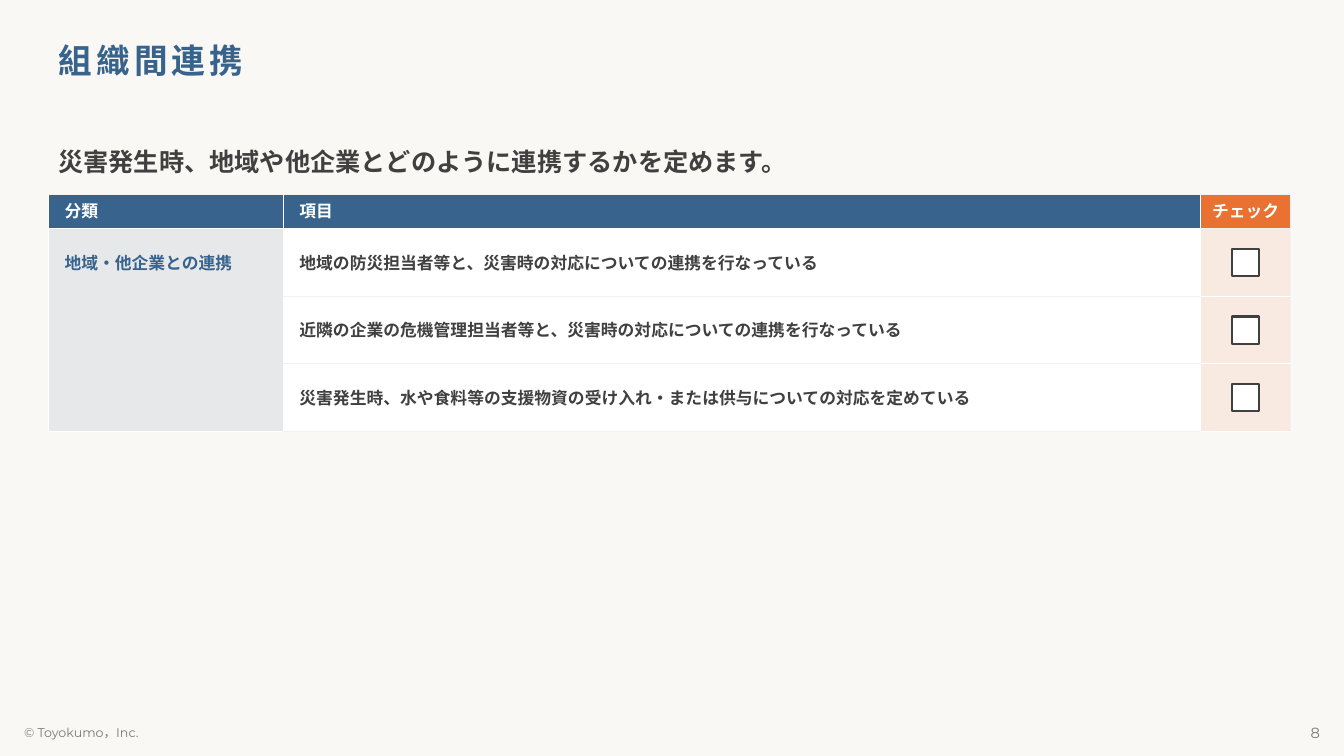
from dataclasses import dataclass

from lxml.etree import SubElement
from pptx import Presentation
from pptx.dml.color import RGBColor
from pptx.enum.shapes import MSO_SHAPE
from pptx.enum.text import MSO_ANCHOR, PP_ALIGN
from pptx.oxml import parse_xml
from pptx.oxml.ns import nsdecls, qn
from pptx.slide import Slide
from pptx.table import Table, _Cell
from pptx.text.text import TextFrame
from pptx.util import Inches, Pt

FONT = "Montserrat"
COLORS = {
    "background": "FAF8F4",
    "blue": "37638D",
    "orange": "E97132",
    "dark": "404040",
    "muted": "797979",
    "rule": "F2F2F2",
    "white": "FFFFFF",
}
TABLE_LEFT, TABLE_TOP = 0.48, 1.93
COLUMN_WIDTHS = (2.33, 9.1, 0.89)
HEADER_HEIGHT, ROW_HEIGHT = 0.34, 0.67
CHECKBOX_SIZE = 0.27


@dataclass(frozen=True)
class TextStyle:
    size: float
    color: str
    bold: bool = False
    align: PP_ALIGN = PP_ALIGN.LEFT


@dataclass(frozen=True)
class CellSpec:
    """grey_sides names the borders (L, R, T, B) that are grey, not white."""
    row: int
    col: int
    text: str
    color: str
    fill: str
    grey_sides: str = ""
    tinted: bool = False
    margins: tuple[float, float, float, float] = (0.16, 0.01, 0.01, 0)
    anchor: MSO_ANCHOR = MSO_ANCHOR.MIDDLE
    align: PP_ALIGN = PP_ALIGN.LEFT


@dataclass(frozen=True)
class Label:
    left: float
    top: float
    width: float
    height: float
    text: str
    style: TextStyle


HEADER_MARGINS = (0.16, 0.05, 0.1, 0.05)
ITEMS = (
    "地域の防災担当者等と、災害時の対応についての連携を行なっている",
    "近隣の企業の危機管理担当者等と、災害時の対応についての連携を行なっている",
    "災害発生時、水や食料等の支援物資の受け入れ・または供与についての対応を定めている",
)
HEADERS = (
    CellSpec(0, 0, "分類", "white", "blue", "T", margins=HEADER_MARGINS),
    CellSpec(0, 1, "項目", "white", "blue", "T", margins=HEADER_MARGINS),
    CellSpec(0, 2, "チェック", "white", "orange", "TRB",
             margins=(0.1, 0.05, 0.1, 0.05), align=PP_ALIGN.CENTER),
)
CATEGORY = CellSpec(1, 0, "地域・他企業との連携", "blue", "blue", tinted=True,
                    margins=(0.16, 0.24, 0.01, 0), anchor=MSO_ANCHOR.TOP)
LABELS = (
    Label(0.48, 1.27, 12.36, 0.66, "災害発生時、地域や他企業とどのように連携するかを定めます。",
          TextStyle(18, "dark", bold=True)),
    Label(0.14, 7.13, 3.92, 0.27, "© Toyokumo，Inc.", TextStyle(9, "muted")),
    Label(10.19, 7.13, 3, 0.27, "8", TextStyle(10.5, "muted", align=PP_ALIGN.RIGHT)),
)


def rgb(name: str) -> RGBColor:
    return RGBColor.from_string(COLORS[name])


def write_text(tf: TextFrame, text: str, style: TextStyle) -> None:
    tf.text = text
    p = tf.paragraphs[0]
    p.alignment = style.align
    for r in p.runs:
        r.font.name = FONT
        r.font.size = Pt(style.size)
        r.font.bold = style.bold
        r.font.color.rgb = rgb(style.color)
        SubElement(r.font._element, qn("a:ea"), typeface=FONT)


def set_margins(target: TextFrame | _Cell, margins: tuple[float, ...]) -> None:
    (target.margin_left, target.margin_top,
     target.margin_right, target.margin_bottom) = map(Inches, margins)


def add_title(s: Slide, text: str) -> None:
    sp = s.shapes.title
    sp.left, sp.top = Inches(0.48), Inches(0.28)
    sp.width, sp.height = Inches(12.33), Inches(0.66)
    tf = sp.text_frame
    write_text(tf, text, TextStyle(24, "blue", bold=True))
    set_margins(tf, (0.1, 0.08, 0.1, 0.05))
    tf.vertical_anchor = MSO_ANCHOR.MIDDLE
    p = tf.paragraphs[0]
    p.line_spacing = 0.9
    p.runs[0].font._element.set("spc", "300")


def add_label(s: Slide, label: Label) -> None:
    sp = s.shapes.add_textbox(Inches(label.left), Inches(label.top),
                              Inches(label.width), Inches(label.height))
    tf = sp.text_frame
    tf.word_wrap = True
    tf.vertical_anchor = MSO_ANCHOR.MIDDLE
    write_text(tf, label.text, label.style)


def set_borders(cell: _Cell, grey_sides: str) -> None:
    props = cell._tc.get_or_add_tcPr()
    for index, side in enumerate("LRTB"):
        color = COLORS["rule" if side in grey_sides else "white"]
        props.insert(index, parse_xml(
            f'<a:ln{side} {nsdecls("a")} w="12700"><a:solidFill>'
            f'<a:srgbClr val="{color}"/></a:solidFill></a:ln{side}>'))


def fill_cell(table: Table, spec: CellSpec) -> None:
    cell = table.cell(spec.row, spec.col)
    write_text(cell.text_frame, spec.text,
               TextStyle(12, spec.color, bold=True, align=spec.align))
    set_margins(cell, spec.margins)
    cell.vertical_anchor = spec.anchor
    cell.fill.solid()
    cell.fill.fore_color.rgb = rgb(spec.fill)
    if spec.tinted:
        color = cell._tc.tcPr.find(f".//{qn('a:srgbClr')}")
        SubElement(color, qn("a:alpha"), val="10000")
    set_borders(cell, spec.grey_sides)


def add_checklist(s: Slide) -> None:
    height = HEADER_HEIGHT + ROW_HEIGHT * len(ITEMS)
    table = s.shapes.add_table(
        len(ITEMS) + 1, len(COLUMN_WIDTHS), Inches(TABLE_LEFT), Inches(TABLE_TOP),
        Inches(sum(COLUMN_WIDTHS)), Inches(height)).table
    table.horz_banding = False
    for column, width in zip(table.columns, COLUMN_WIDTHS):
        column.width = Inches(width)
    for index, row in enumerate(table.rows):
        row.height = Inches(ROW_HEIGHT if index else HEADER_HEIGHT)

    for spec in HEADERS:
        fill_cell(table, spec)
    table.cell(1, 0).merge(table.cell(len(ITEMS), 0))
    fill_cell(table, CATEGORY)
    for row, item in enumerate(ITEMS, start=1):
        first = row == 1
        fill_cell(table, CellSpec(row, 1, item, "dark", "white", "B" if first else "TB"))
        fill_cell(table, CellSpec(row, 2, "", "dark", "orange",
                                  "TR" if first else "R", tinted=True))
        add_checkbox(s, row)


def add_checkbox(s: Slide, row: int) -> None:
    left = TABLE_LEFT + sum(COLUMN_WIDTHS) - (COLUMN_WIDTHS[-1] + CHECKBOX_SIZE) / 2
    row_top = TABLE_TOP + HEADER_HEIGHT + (row - 1) * ROW_HEIGHT
    top = row_top + (ROW_HEIGHT - CHECKBOX_SIZE) / 2
    sp = s.shapes.add_shape(MSO_SHAPE.ROUNDED_RECTANGLE, Inches(left), Inches(top),
                            Inches(CHECKBOX_SIZE), Inches(CHECKBOX_SIZE))
    sp.adjustments[0] = 0
    sp.shadow.inherit = False
    sp.fill.solid()
    sp.fill.fore_color.rgb = rgb("white")
    sp.line.color.rgb = rgb("dark")
    sp.line.width = Pt(1.5)


def main() -> None:
    prs = Presentation()
    prs.slide_width, prs.slide_height = Inches(13.33), Inches(7.5)
    s = prs.slides.add_slide(prs.slide_layouts[5])
    s.background.fill.solid()
    s.background.fill.fore_color.rgb = rgb("background")
    add_title(s, "組織間連携")
    for label in LABELS:
        add_label(s, label)
    add_checklist(s)
    prs.save("out.pptx")


if __name__ == "__main__":
    main()
